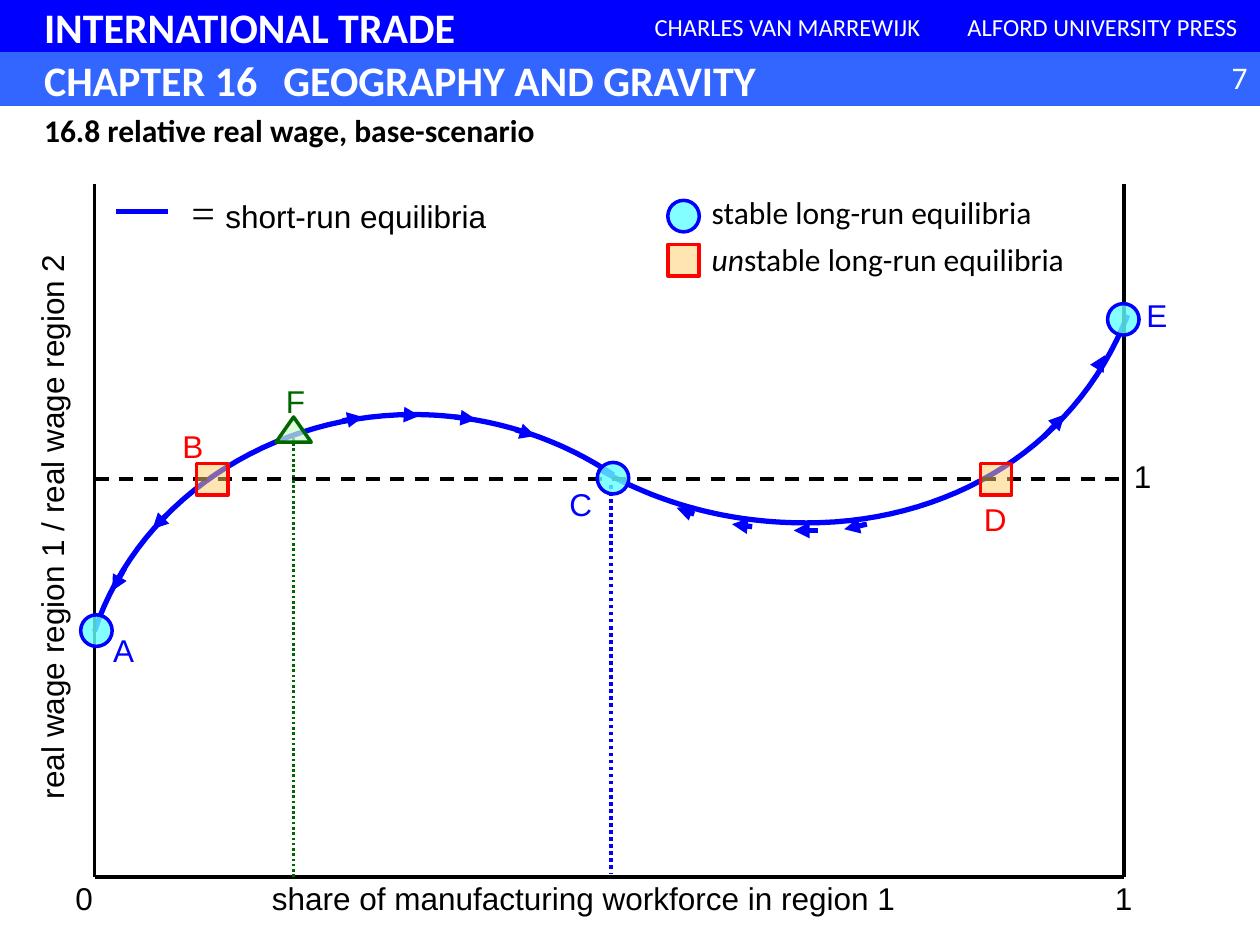
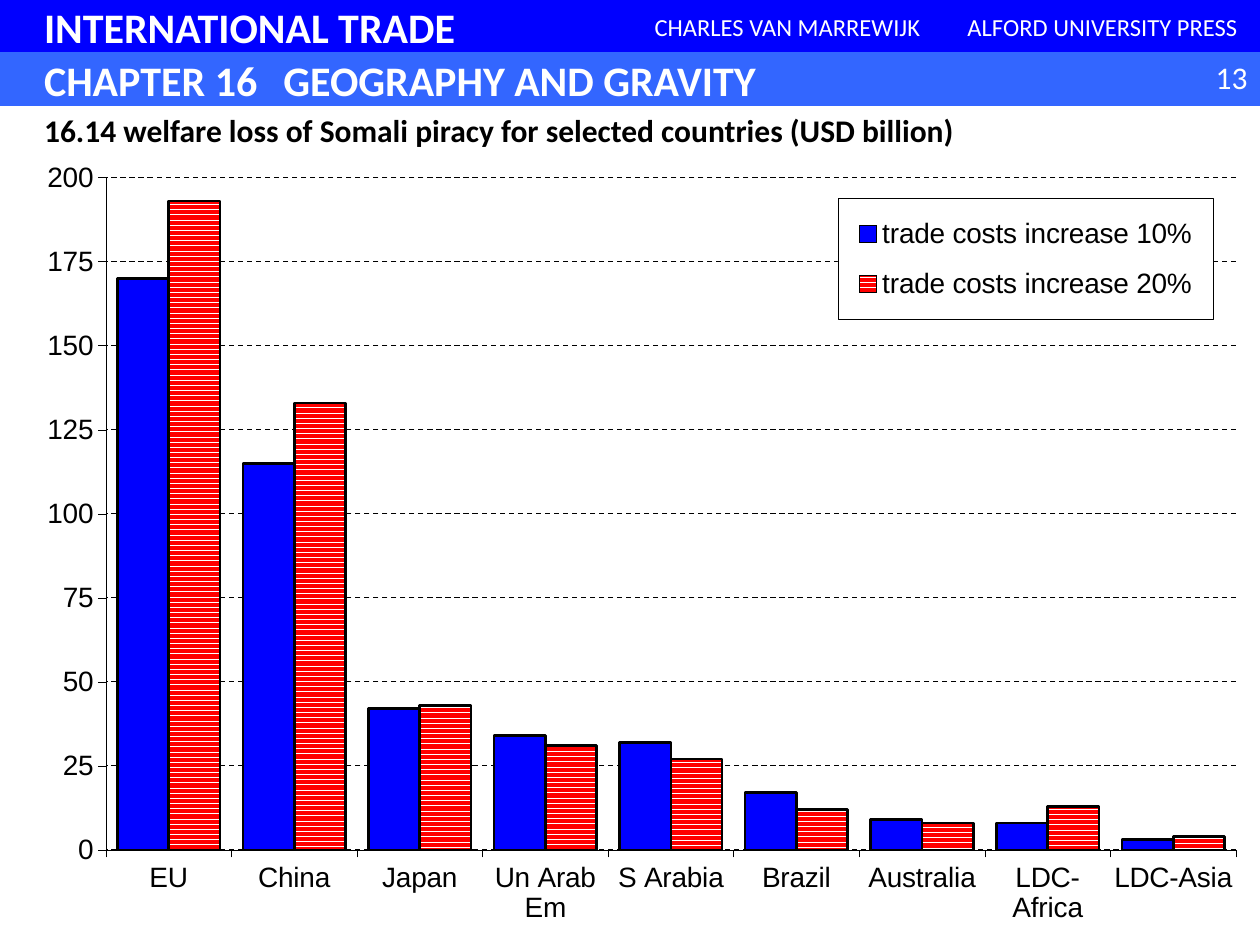
from dataclasses import dataclass

from lxml import etree
from pptx import Presentation
from pptx.chart.data import CategoryChartData
from pptx.dml.color import RGBColor
from pptx.enum.chart import XL_CHART_TYPE, XL_LEGEND_POSITION, XL_TICK_MARK
from pptx.enum.dml import MSO_LINE, MSO_PATTERN
from pptx.enum.shapes import MSO_CONNECTOR, MSO_SHAPE
from pptx.enum.text import MSO_ANCHOR, MSO_AUTO_SIZE, PP_ALIGN
from pptx.oxml import parse_xml
from pptx.oxml.ns import nsdecls, qn
from pptx.util import Inches, Pt

LEFT, CENTER, RIGHT = PP_ALIGN.LEFT, PP_ALIGN.CENTER, PP_ALIGN.RIGHT
TOP, MIDDLE = MSO_ANCHOR.TOP, MSO_ANCHOR.MIDDLE
OVAL, SQUARE, TRIANGLE = MSO_SHAPE.OVAL, MSO_SHAPE.RECTANGLE, MSO_SHAPE.ISOSCELES_TRIANGLE
DASH, DOT = MSO_LINE.DASH, MSO_LINE.ROUND_DOT
TITLE_ONLY = 5


@dataclass(frozen=True)
class Theme:
    blue: str = "0000FF"
    light_blue: str = "3366FF"
    red: str = "FF0000"
    green: str = "006600"
    black: str = "000000"
    white: str = "FFFFFF"
    aqua: str = "66FFFF"
    orange: str = "FFCC66"
    mint: str = "CCFFCC"
    heading: str = "Calibri"
    body: str = "Arial"
    symbol: str = "Times New Roman"
    band_size: int = 24
    credit_size: int = 14
    text_size: int = 18
    chart_size: int = 16


def rgb(color):
    return RGBColor.from_string(color)


def bezier(p0, p1, p2, p3, steps=30):
    """Points along a cubic curve, without its start."""
    for i in range(1, steps + 1):
        t = i / steps
        u = 1 - t
        yield tuple(u**3 * a + 3 * u * u * t * b + 3 * u * t * t * c + t**3 * d
                    for a, b, c, d in zip(p0, p1, p2, p3))


class Deck:
    def __init__(self, theme):
        self.t = theme
        self.prs = Presentation()
        self.prs.slide_width, self.prs.slide_height = Inches(10), Inches(7.5)
        self.s = None

    # Text
    def style(self, font, size, color, face, bold=False, italic=False):
        font.size, font.name = Pt(size), face
        font.bold, font.italic = bold, italic
        font.color.rgb = rgb(color)

    def run(self, p, text, size=None, color=None, face=None, **look):
        r = p.add_run()
        r.text = text
        self.style(r.font, size or self.t.text_size, color or self.t.black,
                   face or self.t.body, **look)

    def text_box(self, x, y, w, runs, h=0.4, align=LEFT, wrap=False, rotation=0):
        sp = self.s.shapes.add_textbox(Inches(x), Inches(y), Inches(w), Inches(h))
        sp.rotation = rotation
        tf = sp.text_frame
        tf.word_wrap = wrap
        p = tf.paragraphs[0]
        p.alignment = align
        for text, look in runs:
            self.run(p, text, **look)

    def label(self, x, y, w, text, rotation=0, **look):
        self.text_box(x, y, w, [(text, look)], rotation=rotation)

    # Shapes and lines
    def shape(self, kind, x, y, w, h, fill, line=None, width=0.75, opacity=None):
        sp = self.s.shapes.add_shape(kind, Inches(x), Inches(y), Inches(w), Inches(h))
        sp.shadow.inherit = False
        sp.fill.solid()
        sp.fill.fore_color.rgb = rgb(fill)
        if opacity:
            clr = sp._element.spPr.find(".//" + qn("a:srgbClr"))
            etree.SubElement(clr, qn("a:alpha")).set("val", str(opacity * 1000))
        if line:
            sp.line.color.rgb = rgb(line)
            sp.line.width = Pt(width)
        else:
            sp.line.fill.background()
        return sp

    def band(self, x, y, w, fill, text, size, align=LEFT, indent=0.1, bold=False, tab=None):
        sp = self.shape(SQUARE, x, y, w, 0.42, fill, fill)
        tf = sp.text_frame
        tf.vertical_anchor = MIDDLE
        tf.margin_left = Inches(indent)
        p = tf.paragraphs[0]
        p.alignment = align
        if tab:
            tabs = etree.SubElement(p._p.get_or_add_pPr(), qn("a:tabLst"))
            stop = etree.SubElement(tabs, qn("a:tab"))
            stop.set("pos", str(Inches(tab)))
            stop.set("algn", "l")
        self.run(p, text, size, self.t.white, self.t.heading, bold=bold)

    def line(self, start, end, color, width=2, dash=None, arrow=False):
        c = self.s.shapes.add_connector(
            MSO_CONNECTOR.STRAIGHT, *(Inches(v) for v in (*start, *end)))
        c.line.color.rgb = rgb(color)
        c.line.width = Pt(width)
        if dash:
            c.line.dash_style = dash
        spPr = c._element.spPr
        if arrow:
            etree.SubElement(spPr.find(qn("a:ln")), qn("a:tailEnd")).set("type", "triangle")
        etree.SubElement(spPr, qn("a:effectLst"))

    def curve(self, points, color, width=3):
        """Draw two joined cubic curves given by seven points."""
        path_points = [*bezier(*points[:4]), *bezier(*points[3:])]
        fb = self.s.shapes.build_freeform(*(Inches(v) for v in points[0]))
        fb.add_line_segments([(Inches(x), Inches(y)) for x, y in path_points], close=False)
        sp = fb.convert_to_shape()
        sp.shadow.inherit = False
        sp.fill.background()
        sp.line.color.rgb = rgb(color)
        sp.line.width = Pt(width)

    # Slide frame: bands, number and title
    def new_slide(self, number, title):
        t = self.t
        self.s = self.prs.slides.add_slide(self.prs.slide_layouts[TITLE_ONLY])
        self.band(0, 0, 10, t.blue, "INTERNATIONAL TRADE", t.band_size, indent=0.35, bold=True)
        for x, credit in ((5, "CHARLES VAN MARREWIJK"), (7.5, "ALFORD UNIVERSITY PRESS")):
            self.band(x, 0, 2.5, t.blue, credit, t.credit_size, CENTER)
        self.band(0, 0.42, 10, t.light_blue, "CHAPTER 16\tGEOGRAPHY AND GRAVITY",
                  t.band_size, indent=0.35, bold=True, tab=1.9)
        self.text_box(9.33, 0.41, 0.67, [(str(number), dict(color=t.white, face=t.heading))],
                      align=RIGHT, wrap=True)
        sp = self.s.shapes.title
        sp.left, sp.top, sp.width, sp.height = (Inches(v) for v in (0.25, 0.83, 8.58, 0.4))
        tf = sp.text_frame
        tf.auto_size = MSO_AUTO_SIZE.NONE
        tf.vertical_anchor = TOP
        p = tf.paragraphs[0]
        p.alignment = LEFT
        self.run(p, title, face=t.heading, bold=True)

    # Chart
    def layout_xml(self, x, y, w, h, inner=False):
        target = '<c:layoutTarget val="inner"/>' if inner else ""
        return parse_xml(
            f'<c:layout {nsdecls("c")}><c:manualLayout>{target}'
            '<c:xMode val="edge"/><c:yMode val="edge"/>'
            f'<c:x val="{x}"/><c:y val="{y}"/><c:w val="{w}"/><c:h val="{h}"/>'
            '</c:manualLayout></c:layout>')

    def column_chart(self, x, y, w, h, cats, series):
        t = self.t
        data = CategoryChartData(number_format="0")
        data.categories = cats
        for name, values in series:
            data.add_series(name, values)
        frame = self.s.shapes.add_chart(XL_CHART_TYPE.COLUMN_CLUSTERED, Inches(x), Inches(y),
                                        Inches(w), Inches(h), data)
        # The chart lies behind the title
        frame._element.getparent().insert(2, frame._element)
        chart = frame.chart
        chart.has_title = False
        self.style(chart.font, t.chart_size, t.black, t.body)

        # Axes, with level labels
        value_axis = chart.value_axis
        value_axis.minimum_scale, value_axis.maximum_scale = 0, 200
        value_axis.major_unit = 25
        value_axis.tick_labels.number_format = "0"
        value_axis.tick_labels.number_format_is_linked = False
        grid = value_axis.major_gridlines.format.line
        grid.color.rgb = rgb(t.black)
        grid.width, grid.dash_style = Pt(0.75), DASH
        for axis in (chart.category_axis, value_axis):
            axis.major_tick_mark = XL_TICK_MARK.OUTSIDE
            axis.format.line.color.rgb = rgb(t.black)
            axis.format.line.width = Pt(0.25)
            self.style(axis.tick_labels.font, t.chart_size, t.black, t.body)
            body = axis._element.find(qn("c:txPr")).find(qn("a:bodyPr"))
            body.set("rot", "0")
            body.set("vert", "horz")

        # Columns: plain, then striped
        plot = chart.plots[0]
        plot.gap_width, plot.overlap, plot.vary_by_categories = 45, 0, False
        for ser in plot.series:
            ser.format.line.color.rgb = rgb(t.black)
            ser.format.line.width = Pt(1.5)
        plain, striped = (ser.format.fill for ser in plot.series)
        plain.solid()
        plain.fore_color.rgb = rgb(t.blue)
        striped.patterned()
        striped.pattern = MSO_PATTERN.DARK_HORIZONTAL
        striped.fore_color.rgb, striped.back_color.rgb = rgb(t.red), rgb(t.white)

        # Legend and places
        chart.has_legend = True
        chart.legend.position = XL_LEGEND_POSITION.RIGHT
        chart.legend.include_in_layout = False
        self.style(chart.legend.font, t.chart_size, t.black, t.body)
        legend = chart.legend._element
        area = chart._chartSpace.find(".//" + qn("c:plotArea"))
        for part in (legend, area):
            for old in part.findall(qn("c:layout")):
                part.remove(old)
        area.insert(0, self.layout_xml(0.084, 0.087, 0.897, 0.8, inner=True))
        overlay = legend.find(qn("c:overlay"))
        overlay.addprevious(self.layout_xml(0.665, 0.112, 0.298, 0.143))
        overlay.addnext(parse_xml(
            f'<c:spPr {nsdecls("c", "a")}><a:solidFill><a:srgbClr val="{t.white}"/></a:solidFill>'
            f'<a:ln w="3175"><a:solidFill><a:srgbClr val="{t.black}"/></a:solidFill></a:ln></c:spPr>'))


def wage_slide(d):
    t = d.t
    d.new_slide(7, "16.8 relative real wage, base-scenario")

    # Short-run equilibria
    d.curve([(0.75, 5.01), (1.09, 3.99), (2.12, 3.29), (3.28, 3.29),
             (3.85, 3.29), (4.41, 3.46), (4.87, 3.77)], t.blue)
    d.curve([(8.95, 2.5), (8.55, 3.53), (7.56, 4.15), (6.4, 4.15),
             (5.83, 4.15), (5.27, 4.02), (4.75, 3.72)], t.blue)

    # Axes and guide lines
    left, right, top, bottom, one = 0.75, 8.92, 1.46, 6.96, 3.8
    for x in (left, right):
        d.line((x, top), (x, bottom), t.black)
    d.line((left, bottom), (right, bottom), t.black)
    d.line((left, one), (right, one), t.black, dash=DASH)
    d.line((4.85, 3.85), (4.85, 6.93), t.blue, dash=DOT)
    d.line((2.33, bottom), (2.33, 3.46), t.green, 1.5, DOT)
    for x, y, w, text in ((2.06, 6.93, 5.19, "share of manufacturing workforce in region 1"),
                          (0.5, 6.93, 0.34, "0"), (8.75, 6.93, 0.34, "1"),
                          (8.9, 3.58, 0.34, "1")):
        d.label(x, y, w, text)
    d.label(-1.87, 3.96, 4.56, "real wage region 1 / real wage region 2", rotation=270)

    # Direction of adjustment
    for start, end in (((2.72, 3.34), (2.88, 3.31)), ((3.19, 3.29), (3.33, 3.3)),
                       ((3.61, 3.31), (3.78, 3.33)), ((4.09, 3.41), (4.25, 3.46)),
                       ((1.32, 4.09), (1.21, 4.2)), ((0.99, 4.51), (0.89, 4.69)),
                       ((8.28, 3.47), (8.45, 3.29)), ((8.71, 2.92), (8.77, 2.82)),
                       ((6.88, 4.16), (6.7, 4.2)), ((6.49, 4.21), (6.3, 4.21)),
                       ((5.97, 4.18), (5.81, 4.16)), ((5.51, 4.08), (5.37, 4.03))):
        d.line(start, end, t.blue, 3, arrow=True)

    # Equilibria, each list ending with its legend key
    for x, y in ((4.74, 3.67), (0.64, 4.88), (8.79, 2.41), (5.3, 1.59)):
        d.shape(OVAL, x, y, 0.25, 0.25, t.aqua, t.blue, 2, opacity=80)
    for x, y in ((7.78, 3.68), (1.56, 3.68), (5.3, 1.94)):
        d.shape(SQUARE, x, y, 0.25, 0.25, t.orange, t.red, 2, opacity=50)
    d.shape(TRIANGLE, 2.19, 3.31, 0.28, 0.2, t.mint, t.green, 2, opacity=70)
    for letter, x, y, color in (("A", 0.8, 4.96, t.blue), ("B", 1.35, 3.34, t.red),
                                ("C", 4.42, 3.8, t.blue), ("D", 7.71, 3.92, t.red),
                                ("E", 9, 2.3, t.blue), ("F", 2.17, 2.98, t.green)):
        d.label(x, y, 0.37, letter, color=color)

    # Legend
    d.line((0.92, 1.68), (1.33, 1.68), t.blue, 3)
    d.text_box(1.42, 1.43, 2.56, [("= ", dict(size=t.band_size, face=t.symbol)),
                                  ("short-run equilibria", {})], h=0.51)
    stable = ("stable long-run equilibria", dict(face=t.heading))
    d.text_box(5.55, 1.48, 2.95, [stable])
    d.text_box(5.55, 1.86, 3.23, [("un", dict(face=t.heading, italic=True)), stable])


def piracy_slide(d):
    d.new_slide(13, "16.14 welfare loss of Somali piracy for selected countries (USD billion)")
    d.column_chart(
        0, 0.83, 10, 6.67,
        ["EU", "China", "Japan", "Un Arab Em", "S Arabia", "Brazil", "Australia",
         "LDC-Africa", "LDC-Asia"],
        [("trade costs increase 10%", (170, 115, 42, 34, 32, 17, 9, 8, 3)),
         ("trade costs increase 20%", (193, 133, 43, 31, 27, 12, 8, 13, 4))])


def main():
    d = Deck(Theme())
    wage_slide(d)
    piracy_slide(d)
    d.prs.save("out.pptx")


if __name__ == "__main__":
    main()
